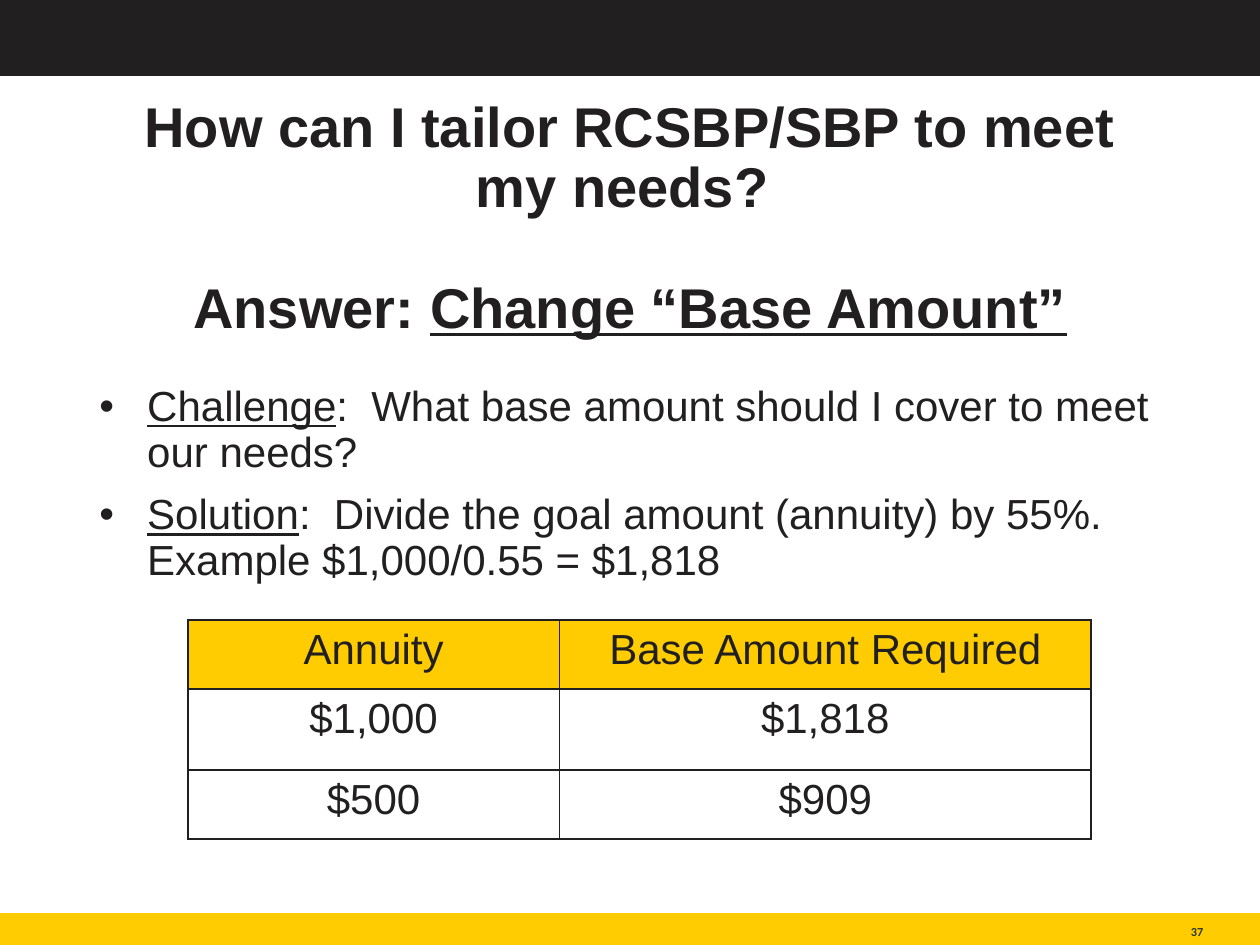
"""Build the slide on tailoring the base amount, with its annuity table."""
from lxml.etree import SubElement
from pptx import Presentation
from pptx.dml.color import RGBColor
from pptx.enum.shapes import MSO_SHAPE
from pptx.enum.text import MSO_ANCHOR, PP_ALIGN
from pptx.oxml.ns import qn
from pptx.util import Inches, Pt

COLORS = {"ink": "221F20", "gold": "FFCC01", "number": "2F372F"}
BARS = [(0.01, 0.59, "ink"), (7.25, 0.25, "gold")]
TITLE = [
    [("How can I tailor RCSBP/SBP to meet my needs? ", False)],
    [("Answer: ", False), ("Change “Base Amount”", True)],
]
BULLETS = [
    [("Challenge", True), (":  What base amount should I cover to meet our needs?", False)],
    [("Solution", True),
     (":  Divide the goal amount (annuity) by 55%. Example $1,000/0.55 = $1,818", False)],
]
ROWS = [("Annuity", "Base Amount Required"), ("$1,000", "$1,818"), ("$500", "$909")]
COL_WIDTHS = [2.95, 4.22]
ROW_HEIGHTS = [0.55, 0.64, 0.55]
PAGE = "37"


def color(name):
    return RGBColor.from_string(COLORS[name])


def style(font, size, name="Arial", tint="ink", bold=False, underline=False):
    font.name, font.size, font.bold, font.underline = name, Pt(size), bold, underline
    font.color.rgb = color(tint)


def add_bar(slide, top, height, name):
    sp = slide.shapes.add_shape(MSO_SHAPE.RECTANGLE, 0, Inches(top), Inches(10), Inches(height))
    sp.shadow.inherit = False
    sp.fill.solid()
    sp.fill.fore_color.rgb = color(name)
    sp.line.color.rgb = color(name)
    sp.line.width = Pt(1)


def add_text(slide, box, paragraphs, size, gap, bold=False, align=PP_ALIGN.LEFT,
             anchor=MSO_ANCHOR.TOP, bullet=False):
    tf = slide.shapes.add_textbox(*map(Inches, box)).text_frame
    tf.word_wrap = True
    tf.vertical_anchor = anchor
    for i, runs in enumerate(paragraphs):
        p = tf.add_paragraph() if i else tf.paragraphs[0]
        p.alignment = align
        p.line_spacing = 0.9
        if i:
            p.space_before = Pt(gap)
        if bullet:
            pPr = p._p.get_or_add_pPr()
            pPr.set("marL", str(Inches(0.38)))
            pPr.set("indent", str(Inches(-0.38)))
            SubElement(pPr, qn("a:buFont"), typeface="Arial")
            SubElement(pPr, qn("a:buChar"), char="•")
        for text, underline in runs:
            r = p.add_run()
            r.text = text
            style(r.font, size, bold=bold, underline=underline)


def add_borders(cell):
    tcPr = cell._tc.get_or_add_tcPr()
    for i, side in enumerate(("lnL", "lnR", "lnT", "lnB")):
        ln = tcPr.makeelement(qn(f"a:{side}"), {"w": str(Pt(1))})
        fill = SubElement(ln, qn("a:solidFill"))
        SubElement(fill, qn("a:srgbClr"), val=COLORS["ink"])
        tcPr.insert(i, ln)


def add_annuity_table(slide):
    table = slide.shapes.add_table(
        len(ROWS), len(COL_WIDTHS), Inches(1.49), Inches(4.92),
        Inches(sum(COL_WIDTHS)), Inches(sum(ROW_HEIGHTS))).table
    for col, width in zip(table.columns, COL_WIDTHS):
        col.width = Inches(width)
    for i, (row, height) in enumerate(zip(table.rows, ROW_HEIGHTS)):
        row.height = Inches(height)
        for cell, text in zip(row.cells, ROWS[i]):
            cell.text_frame.text = text
            p = cell.text_frame.paragraphs[0]
            p.alignment = PP_ALIGN.CENTER
            style(p.runs[0].font, 24)
            if i:
                cell.fill.background()
            else:
                cell.fill.solid()
                cell.fill.fore_color.rgb = color("gold")
            add_borders(cell)


def add_page_number(slide):
    tf = slide.shapes.add_textbox(Inches(8.68), Inches(7.25), Inches(0.87), Inches(0.2)).text_frame
    tf.margin_left = tf.margin_right = tf.margin_top = tf.margin_bottom = 0
    tf.vertical_anchor = MSO_ANCHOR.BOTTOM
    tf.word_wrap = True
    tf.text = PAGE
    p = tf.paragraphs[0]
    p.alignment = PP_ALIGN.RIGHT
    style(p.runs[0].font, 7, name="Calibri", tint="number", bold=True)


def main():
    prs = Presentation()
    prs.slide_width, prs.slide_height = Inches(10), Inches(7.5)
    slide = prs.slides.add_slide(prs.slide_layouts[6])
    for bar in BARS:
        add_bar(slide, *bar)
    add_page_number(slide)
    add_text(slide, (0.69, 0.83, 8.62, 1.83), TITLE, 32, 34.5, bold=True,
             align=PP_ALIGN.CENTER, anchor=MSO_ANCHOR.MIDDLE)
    add_text(slide, (0.69, 3.01, 8.62, 1.75), BULLETS, 24, 10, bullet=True)
    add_annuity_table(slide)
    prs.save("out.pptx")


if __name__ == "__main__":
    main()
